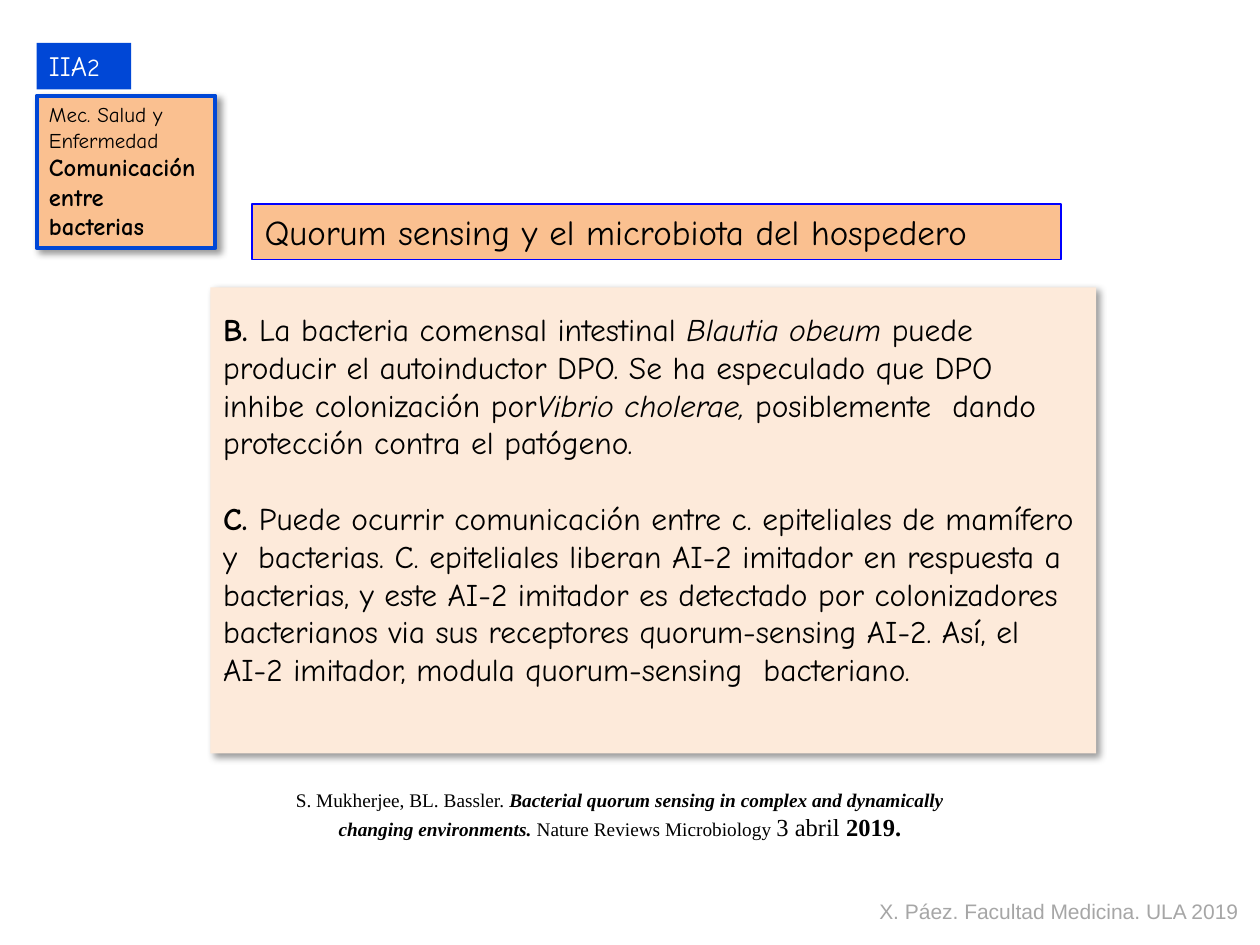
from pptx import Presentation, util as u
from pptx.dml.color import RGBColor
from pptx.enum import shapes, text
from pptx.oxml import parse_xml
from pptx.oxml.ns import nsdecls

COLORS = {"navy": "0047D6", "edge": "0000FF", "orange": "FAC090", "cream": "FDEADA",
          "black": "000000", "white": "FFFFFF", "gray": "A6A6A6"}
COMIC, TIMES, ARIAL = "Comic Neue", "Times New Roman", "Arial"

# The slide is a grid of 100 columns by 75 rows
CELL = u.Inches(0.1)
BOXES = {
    "body": (16.7, 22.8, 70.3, 37),
    "title": (20, 16.2, 64.2, 4.4),
    "citation": (22.3, 62.1, 53.8, 5.2),
    "credit": (68.8, 70.8, 30.8, 3),
    "code": (2.9, 3.4, 7.5, 3.7),
    "topic": (2.9, 7.6, 14.2, 12.1),
}


def place(part, box):
    part.left, part.top, part.width, part.height = (round(n * CELL) for n in box)


def paint(part, fill, line=None, width=0, shadow=False):
    part.fill.solid()
    part.fill.fore_color.rgb = RGBColor.from_string(COLORS[fill])
    if line:
        part.line.color.rgb = RGBColor.from_string(COLORS[line])
        part.line.width = u.Pt(width)
    else:
        part.line.fill.background()
    part.shadow.inherit = False
    if shadow:
        effects = part.element.spPr.find("{*}effectLst")
        effects.append(parse_xml(
            f'<a:outerShdw {nsdecls("a")} blurRad="{u.Pt(4)}" dist="{u.Pt(3)}" dir="2700000" '
            f'algn="tl" rotWithShape="0"><a:srgbClr val="{COLORS["black"]}">'
            '<a:alpha val="40000"/></a:srgbClr></a:outerShdw>'))


def write(part, paragraphs, font, color="black", align=text.PP_ALIGN.LEFT, gap=0, wrap=True):
    """Each paragraph is a list of runs: (wording, size, style), style holding b and/or i."""
    frame = part.text_frame
    frame.word_wrap = wrap
    frame.auto_size = text.MSO_AUTO_SIZE.NONE
    frame.vertical_anchor = text.MSO_ANCHOR.TOP
    for index, runs in enumerate(paragraphs):
        paragraph = frame.add_paragraph() if index else frame.paragraphs[0]
        paragraph.alignment = align
        paragraph.space_before = u.Pt(gap if index else 0)
        for wording, size, style in runs:
            run = paragraph.add_run()
            run.text = wording
            run.font.name, run.font.size = font, u.Pt(size)
            run.font.bold, run.font.italic = "b" in style, "i" in style
            run.font.color.rgb = RGBColor.from_string(COLORS[color])


def add_rectangle(slide, box):
    rectangle = slide.shapes.add_shape(shapes.MSO_SHAPE.RECTANGLE, 0, 0, 0, 0)
    place(rectangle, box)
    return rectangle


def add_label(slide, box):
    label = slide.shapes.add_textbox(0, 0, 0, 0)
    place(label, box)
    return label


def fill_title(slide, box):
    title = slide.shapes.title
    place(title, box)
    paint(title, "orange", "edge", 0.75)
    write(title, [[("Quorum sensing y el microbiota del hospedero", 20, "")]], COMIC)


def fill_body(slide, box):
    body = slide.placeholders[1]
    place(body, box)
    paint(body, "cream", shadow=True)
    write(body, [
        [("B. ", 18, "b"),
         ("La bacteria comensal intestinal ", 18, ""),
         ("Blautia obeum ", 18, "i"),
         ("puede producir el autoinductor DPO. Se ha especulado que DPO inhibe "
          "colonización por", 18, ""),
         ("Vibrio cholerae, ", 18, "i"),
         ("posiblemente  dando protección contra el patógeno.", 18, "")],
        [("C. ", 18, "b"),
         ("Puede ocurrir comunicación entre c. epiteliales de mamífero y  bacterias. "
          "C. epiteliales liberan AI-2 imitador en respuesta a bacterias, y este AI-2 "
          "imitador es detectado por colonizadores bacterianos via sus receptores "
          "quorum-sensing AI-2. Así, el AI-2 imitador, modula quorum-sensing  "
          "bacteriano.", 18, "")],
    ], COMIC, gap=21.6)
    body.text_frame.margin_top = u.Inches(0.18)
    # Plain paragraphs: no bullet, no hanging indent
    for paragraph in body.text_frame.paragraphs:
        properties = paragraph._p.get_or_add_pPr()
        properties.set("marL", "0")
        properties.set("indent", "0")
        properties.append(parse_xml(f'<a:buNone {nsdecls("a")}/>'))


def add_section_tag(slide, code_box, topic_box):
    code = add_rectangle(slide, code_box)
    paint(code, "navy")
    write(code, [[("IIA", 16, ""), ("2", 14, "")]], COMIC, "white", wrap=False)
    topic = add_rectangle(slide, topic_box)
    paint(topic, "orange", "navy", 2.25, shadow=True)
    write(topic, [[("Mec. Salud y", 12, "")], [("Enfermedad", 12, "")],
                  [("Comunicación entre bacterias", 14, "b")]], COMIC)


def add_sources(slide, citation_box, credit_box):
    write(add_label(slide, citation_box), [[
        ("S. Mukherjee, BL. Bassler. ", 11, ""),
        ("Bacterial quorum sensing in complex and dynamically changing environments. ", 11, "bi"),
        ("Nature Reviews Microbiology ", 11, ""),
        ("3 abril ", 14, ""),
        ("2019.", 14, "b"),
    ]], TIMES, align=text.PP_ALIGN.CENTER)
    write(add_label(slide, credit_box), [[("X. Páez. Facultad Medicina. ULA 2019", 12, "")]],
          ARIAL, "gray", wrap=False)


def main():
    deck = Presentation()
    deck.slide_width, deck.slide_height = 100 * CELL, 75 * CELL
    slide = deck.slides.add_slide(deck.slide_layouts[1])
    fill_title(slide, BOXES["title"])
    fill_body(slide, BOXES["body"])
    add_sources(slide, BOXES["citation"], BOXES["credit"])
    add_section_tag(slide, BOXES["code"], BOXES["topic"])
    deck.save("out.pptx")


if __name__ == "__main__":
    main()
